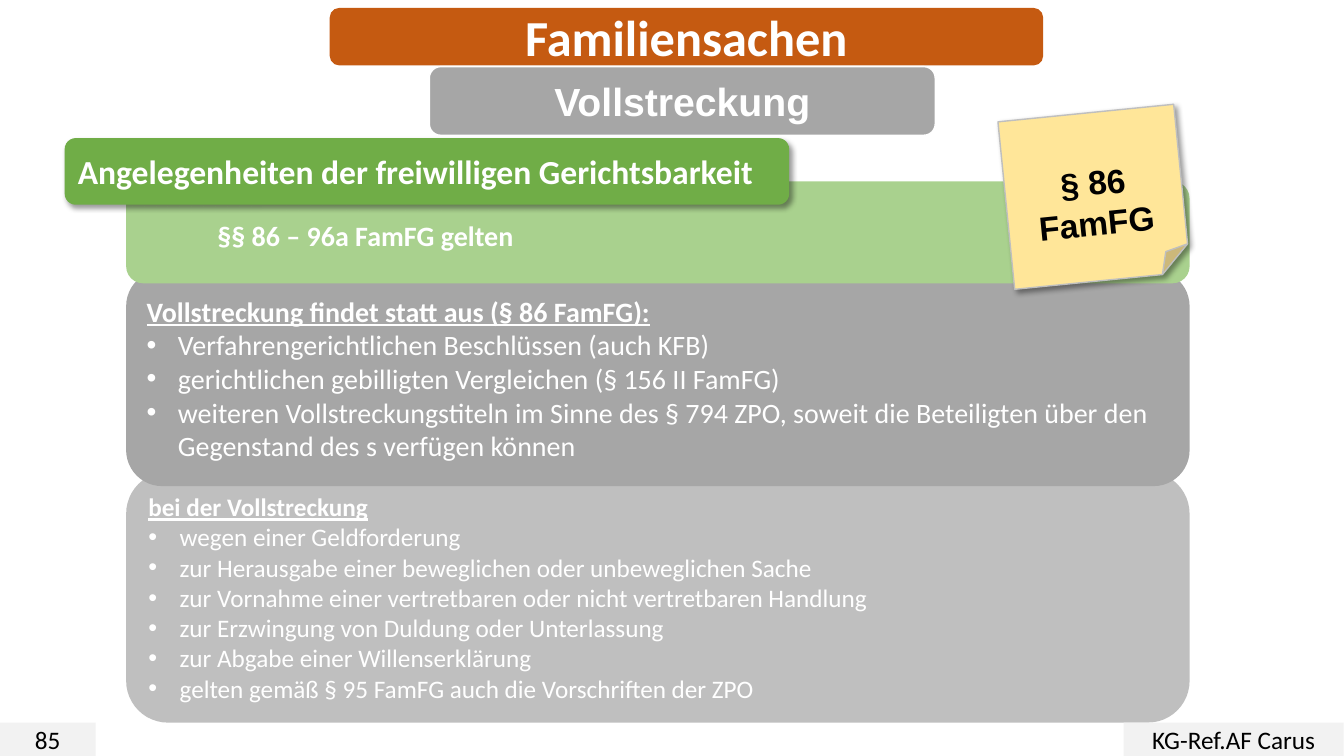
from dataclasses import dataclass

from lxml import etree
from pptx import Presentation
from pptx.dml.color import RGBColor
from pptx.enum.shapes import MSO_SHAPE
from pptx.enum.text import MSO_ANCHOR, PP_ALIGN
from pptx.oxml import parse_xml
from pptx.oxml.ns import nsdecls, qn
from pptx.util import Cm, Pt

ROUNDED = MSO_SHAPE.ROUNDED_RECTANGLE
RECTANGLE = MSO_SHAPE.RECTANGLE
FOLDED = MSO_SHAPE.FOLDED_CORNER
LEFT, CENTER = PP_ALIGN.LEFT, PP_ALIGN.CENTER
TOP, MIDDLE = MSO_ANCHOR.TOP, MSO_ANCHOR.MIDDLE

COLORS = {
    "white": "FFFFFF", "black": "000000", "orange": "C55A11",
    "green": "70AD47", "light green": "A9D18E", "yellow": "FFE699",
    "gray": "A6A6A6", "silver": "BFBFBF", "pale": "F2F2F2",
}
PANEL_LEFT, PANEL_WIDTH = 3.18, 26.8
FOOTER_TOP, FOOTER_HEIGHT = 18.21, 0.84
BULLET_INDENT = Cm(0.79)


@dataclass
class Box:
    """A shape with text; lengths in centimetres, sizes in points."""
    left: float
    top: float
    width: float
    height: float
    fill: str
    lines: tuple[str, ...] = ()
    size: int = 18
    kind: int = ROUNDED
    font: str = "Calibri"
    color: str = "white"
    bold: bool = True
    align: int = CENTER
    bulleted: bool = False
    outline: str = ""
    shadow: bool = False
    rotation: float = 0
    margin_top: float = 0.13


BOXES = [
    # Lower panel
    Box(PANEL_LEFT, 11.89, PANEL_WIDTH, 6.32, "silver", (
        "bei der Vollstreckung",
        "wegen einer Geldforderung",
        "zur Herausgabe einer beweglichen oder unbeweglichen Sache",
        "zur Vornahme einer vertretbaren oder nicht vertretbaren Handlung",
        "zur Erzwingung von Duldung oder Unterlassung",
        "zur Abgabe einer Willenserklärung",
        "gelten gemäß § 95 FamFG auch die Vorschriften der ZPO",
    ), 18, align=LEFT, bulleted=True),
    # Title and footer
    Box(8.31, 0.2, 17.98, 1.45, "orange", ("Familiensachen",), 36),
    Box(0, FOOTER_TOP, 2.41, FOOTER_HEIGHT, "pale", ("85",),
        kind=RECTANGLE, color="black", bold=False),
    Box(28.32, FOOTER_TOP, 5.54, FOOTER_HEIGHT, "pale", ("KG-Ref.AF Carus",),
        kind=RECTANGLE, color="black", bold=False),
    # Subtitle
    Box(10.82, 1.68, 12.75, 1.73, "gray", ("Vollstreckung",), 28,
        font="Arial", outline="white"),
    # Upper panel
    Box(PANEL_LEFT, 6.81, PANEL_WIDTH, 5.44, "gray", (
        "Vollstreckung findet statt aus (§ 86 FamFG):",
        "Verfahrengerichtlichen Beschlüssen (auch KFB)",
        "gerichtlichen gebilligten Vergleichen (§ 156 II FamFG)",
        "weiteren Vollstreckungstiteln im Sinne des § 794 ZPO, soweit die "
        "Beteiligten über den Gegenstand des s verfügen können",
    ), 20, align=LEFT, bulleted=True),
    # Green band and its heading
    Box(PANEL_LEFT, 4.57, PANEL_WIDTH, 2.57, "light green"),
    Box(1.63, 3.48, 18.26, 1.68, "green",
        ("Angelegenheiten der freiwilligen Gerichtsbarkeit",), 24,
        align=LEFT, shadow=True),
    # Sticky note
    Box(25.35, 2.84, 4.45, 4.24, "yellow", ("§ 86 FamFG",), 24, FOLDED,
        "Arial", "black", outline="silver", shadow=True, rotation=354.3,
        margin_top=1.1),
]


def rgb(name: str) -> RGBColor:
    return RGBColor.from_string(COLORS[name])


def add_bullet(paragraph) -> None:
    properties = paragraph._p.get_or_add_pPr()
    properties.set("marL", str(BULLET_INDENT))
    properties.set("indent", str(-BULLET_INDENT))
    font = etree.SubElement(properties, qn("a:buFont"))
    font.set("typeface", "Arial")
    etree.SubElement(properties, qn("a:buChar")).set("char", "•")


def add_shadow(shape) -> None:
    effects = shape._element.spPr.find(qn("a:effectLst"))
    effects.append(parse_xml(
        f'<a:outerShdw {nsdecls("a")} blurRad="{Pt(4)}" dist="{Pt(3)}" '
        'dir="2700000" algn="tl" rotWithShape="0"><a:srgbClr val="000000">'
        '<a:alpha val="40000"/></a:srgbClr></a:outerShdw>'))


def write_text(shape, box: Box, anchor: int = MIDDLE) -> None:
    frame = shape.text_frame
    frame.word_wrap = True
    frame.vertical_anchor = anchor
    frame.margin_top = Cm(box.margin_top)
    frame.text = "\n".join(box.lines)
    for index, paragraph in enumerate(frame.paragraphs):
        paragraph.alignment = box.align
        is_item = box.bulleted and index > 0
        if is_item:
            add_bullet(paragraph)
        for run in paragraph.runs:
            run.font.name = box.font
            run.font.size = Pt(box.size)
            run.font.color.rgb = rgb(box.color)
            run.font.bold = box.bold and not is_item
            run.font.underline = box.bulleted and not is_item


def add_box(slide, box: Box) -> None:
    shape = slide.shapes.add_shape(box.kind, Cm(box.left), Cm(box.top),
                                   Cm(box.width), Cm(box.height))
    shape.rotation = box.rotation
    shape.fill.solid()
    shape.fill.fore_color.rgb = rgb(box.fill)
    if box.outline:
        shape.line.color.rgb = rgb(box.outline)
        shape.line.width = Pt(1)
    else:
        shape.line.fill.background()
    shape.shadow.inherit = False
    if box.shadow:
        add_shadow(shape)
    if box.lines:
        write_text(shape, box)


def add_label(slide, box: Box) -> None:
    shape = slide.shapes.add_textbox(Cm(box.left), Cm(box.top),
                                     Cm(box.width), Cm(box.height))
    write_text(shape, box, TOP)


def main() -> None:
    presentation = Presentation()
    presentation.slide_width = Cm(33.87)
    presentation.slide_height = Cm(19.05)
    slide = presentation.slides.add_slide(presentation.slide_layouts[6])
    for box in BOXES:
        add_box(slide, box)
    # Text on the green band
    add_label(slide, Box(5.23, 5.38, 18, 1.1, "",
                         ("§§ 86 – 96a FamFG gelten",), 20, align=LEFT))
    presentation.save("out.pptx")


if __name__ == "__main__":
    main()
